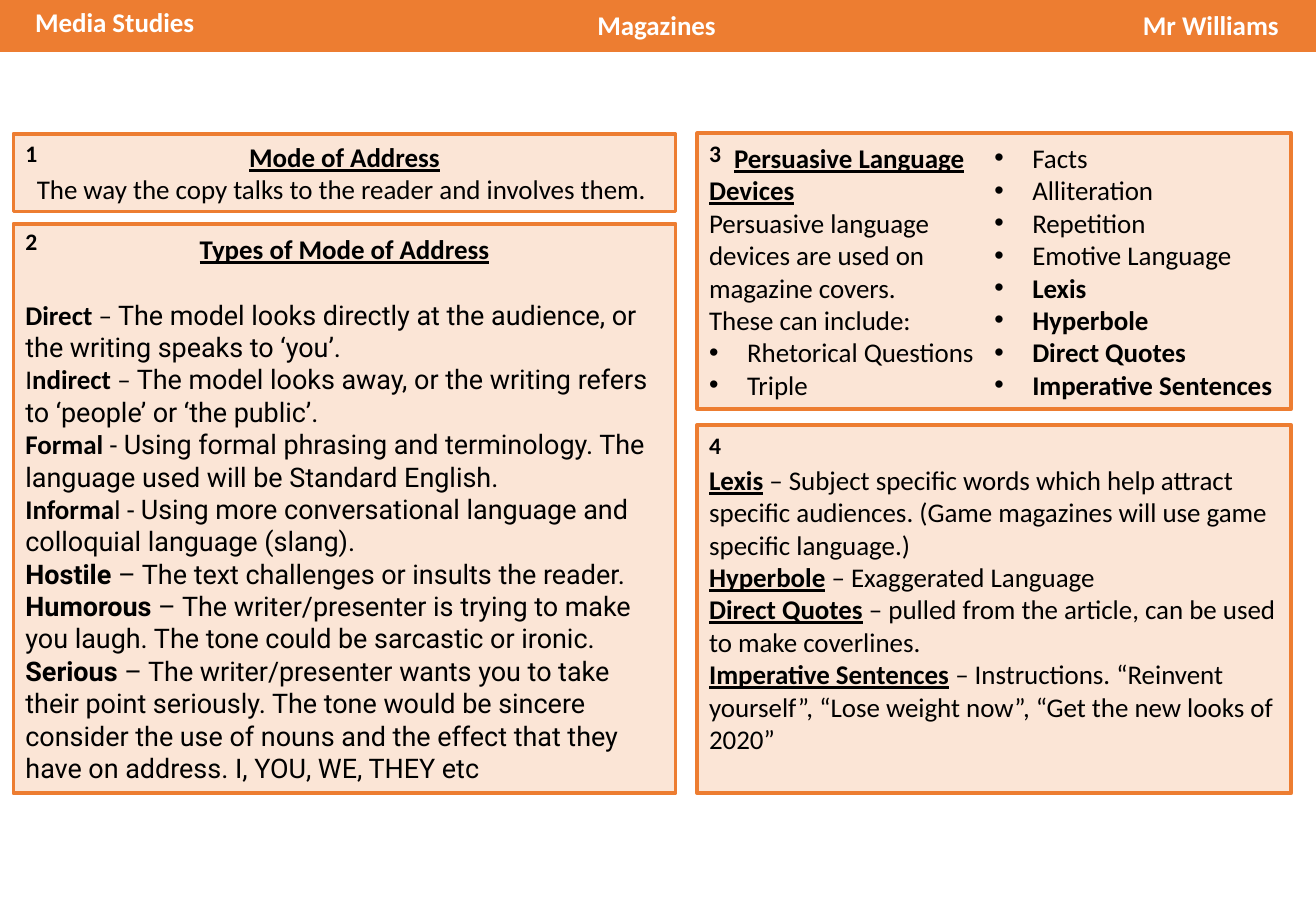
from lxml.etree import SubElement
from pptx import Presentation
from pptx.dml.color import RGBColor
from pptx.enum.shapes import MSO_SHAPE as Shape
from pptx.enum.text import MSO_ANCHOR as Anchor, PP_ALIGN as Align
from pptx.oxml.ns import qn
from pptx.util import Pt

ORANGE = RGBColor(0xED, 0x7D, 0x31)
PEACH = RGBColor(0xFB, 0xE5, 0xD6)
BLACK = RGBColor(0, 0, 0)
WHITE = RGBColor(0xFF, 0xFF, 0xFF)
BODY_SIZE, NUMBER_SIZE = 16, 14
BULLET_INDENT = Pt(22.5)
BLANK_LINE = Pt(19.5)

# Run styles: b = bold, u = underlined, r = Roboto
TYPES = [
    [("Direct", "b"), (" – ", ""),
     ("The model looks directly at the audience, or the writing speaks to ‘you’.", "r")],
    [("I", ""), ("ndirect", "b"), (" – ", ""),
     ("The model looks away, or the writing refers to ‘people’ or ‘the public’.", "r")],
    [("Formal", "b"), (" - ", ""),
     ("Using formal phrasing and terminology. The language used will be Standard English.", "r")],
    [("Informa", "b"), ("l - ", ""),
     ("Using more conversational language and colloquial language (slang).", "r")],
    [("Hostile", "br"), (" – The text challenges or insults the reader.", "r")],
    [("Humorous", "br"), (" – The writer/presenter is trying to make you laugh. "
                          "The tone could be sarcastic or ironic.", "r")],
    [("Serious", "br"), (" – The writer/presenter wants you to take their point seriously. "
                         "The tone would be sincere consider the use of nouns and the effect "
                         "that they have on address. I, YOU, WE, THEY etc", "r")],
]
DEVICES = ["Rhetorical Questions", "Triple", "Facts", "Alliteration", "Repetition",
           "Emotive Language"]
KEY_DEVICES = ["Lexis", "Hyperbole", "Direct Quotes", "Imperative Sentences"]
DEFINITIONS = [
    "Subject specific words which help attract specific audiences. "
    "(Game magazines will use game specific language.)",
    "Exaggerated Language",
    "pulled from the article, can be used to make coverlines.",
    "Instructions. “Reinvent yourself”, “Lose weight now”, “Get the new looks of 2020”",
]


def add_box(slide, left, top, width, height, fill, line_width):
    box = slide.shapes.add_shape(Shape.RECTANGLE, Pt(left), Pt(top), Pt(width), Pt(height))
    box.shadow.inherit = False
    box.fill.solid()
    box.fill.fore_color.rgb = fill
    box.line.color.rgb = ORANGE
    box.line.width = Pt(line_width)
    return box


def format_run(run, style="", size=BODY_SIZE, color=BLACK):
    font = run.font
    font.name = "Roboto" if "r" in style else "Calibri"
    font.size = Pt(size)
    font.color.rgb = color
    font.bold = "b" in style
    font.underline = "u" in style


def write_paragraphs(frame, paragraphs, align=Align.LEFT):
    for index, parts in enumerate(paragraphs):
        paragraph = frame.paragraphs[0] if index == 0 else frame.add_paragraph()
        paragraph.alignment = align
        for words, style in parts:
            run = paragraph.add_run()
            run.text = words
            format_run(run, style)


def add_label(slide, left, top, width, height, words, size, color, wrap):
    label = slide.shapes.add_textbox(Pt(left), Pt(top), Pt(width), Pt(height))
    frame = label.text_frame
    frame.word_wrap = wrap
    frame.text = words
    format_run(frame.paragraphs[0].runs[0], "b", size, color)


def header(slide, left, top, width, height):
    add_box(slide, left, top, width, height, ORANGE, 1)
    for words, x, y, label_width in [("Media Studies", 13.7, 0, 110),
                                     ("Magazines", 347, 1.5, 86),
                                     ("Mr Williams", 670.3, 1.5, 96)]:
        add_label(slide, left + x, top + y, label_width, 26.6, words, BODY_SIZE, WHITE, False)


def panel(slide, number, left, top, width, height, number_rise=0):
    """Bordered panel with its number in the top left corner."""
    box = add_box(slide, left, top, width, height, PEACH, 2.25)
    add_label(slide, left, top - number_rise, 24.5, 24.5, number, NUMBER_SIZE, BLACK, True)
    frame = box.text_frame
    frame.word_wrap = True
    frame.vertical_anchor = Anchor.MIDDLE
    return frame


def mode_of_address(slide, *place):
    frame = panel(slide, "1", *place, number_rise=0.7)
    write_paragraphs(frame, [
        [("Mode of Address", "bu")],
        [("The way the copy talks to the reader and involves them. ", "")],
    ], Align.CENTER)


def types_of_address(slide, *place):
    frame = panel(slide, "2", *place, number_rise=1.4)
    write_paragraphs(frame, [[("Types of Mode of Address", "bu")]] + TYPES)
    title, first_type = frame.paragraphs[:2]
    title.alignment = Align.CENTER
    first_type.space_before = BLANK_LINE


def persuasive_devices(slide, *place):
    frame = panel(slide, "3", *place)
    intro = [
        [("Persuasive Language Devices", "bu")],
        [("Persuasive language devices are used on magazine covers.", "")],
        [("These can include:", "")],
    ]
    bullets = [[(name, "")] for name in DEVICES] + [[(name, "b")] for name in KEY_DEVICES]
    write_paragraphs(frame, intro + bullets)

    # Two columns, with the title starting clear of the number
    body = frame.paragraphs[0]._p.getparent().find(qn("a:bodyPr"))
    body.set("numCol", "2")
    frame.paragraphs[0]._p.get_or_add_pPr().set("indent", str(Pt(14.8)))

    for paragraph in frame.paragraphs[len(intro):]:
        properties = paragraph._p.get_or_add_pPr()
        properties.set("marL", str(BULLET_INDENT))
        properties.set("indent", str(-BULLET_INDENT))
        SubElement(properties, qn("a:buFont")).set("typeface", "Arial")
        SubElement(properties, qn("a:buChar")).set("char", "•")


def definitions(slide, *place):
    frame = panel(slide, "4", *place)
    write_paragraphs(frame, [[(term, "bu"), (f" – {meaning}", "")]
                             for term, meaning in zip(KEY_DEVICES, DEFINITIONS)])


def main():
    deck = Presentation()
    deck.slide_width, deck.slide_height = Pt(780), Pt(540)
    slide = deck.slides.add_slide(deck.slide_layouts[6])

    header(slide, 0, 0, 780, 30.4)
    mode_of_address(slide, 8, 79.4, 392.4, 46.1)
    types_of_address(slide, 8, 132.6, 392.4, 337.6)
    persuasive_devices(slide, 413.2, 79, 352.2, 163.3)
    definitions(slide, 413.2, 252, 352.2, 218.2)

    deck.save("out.pptx")


if __name__ == "__main__":
    main()
